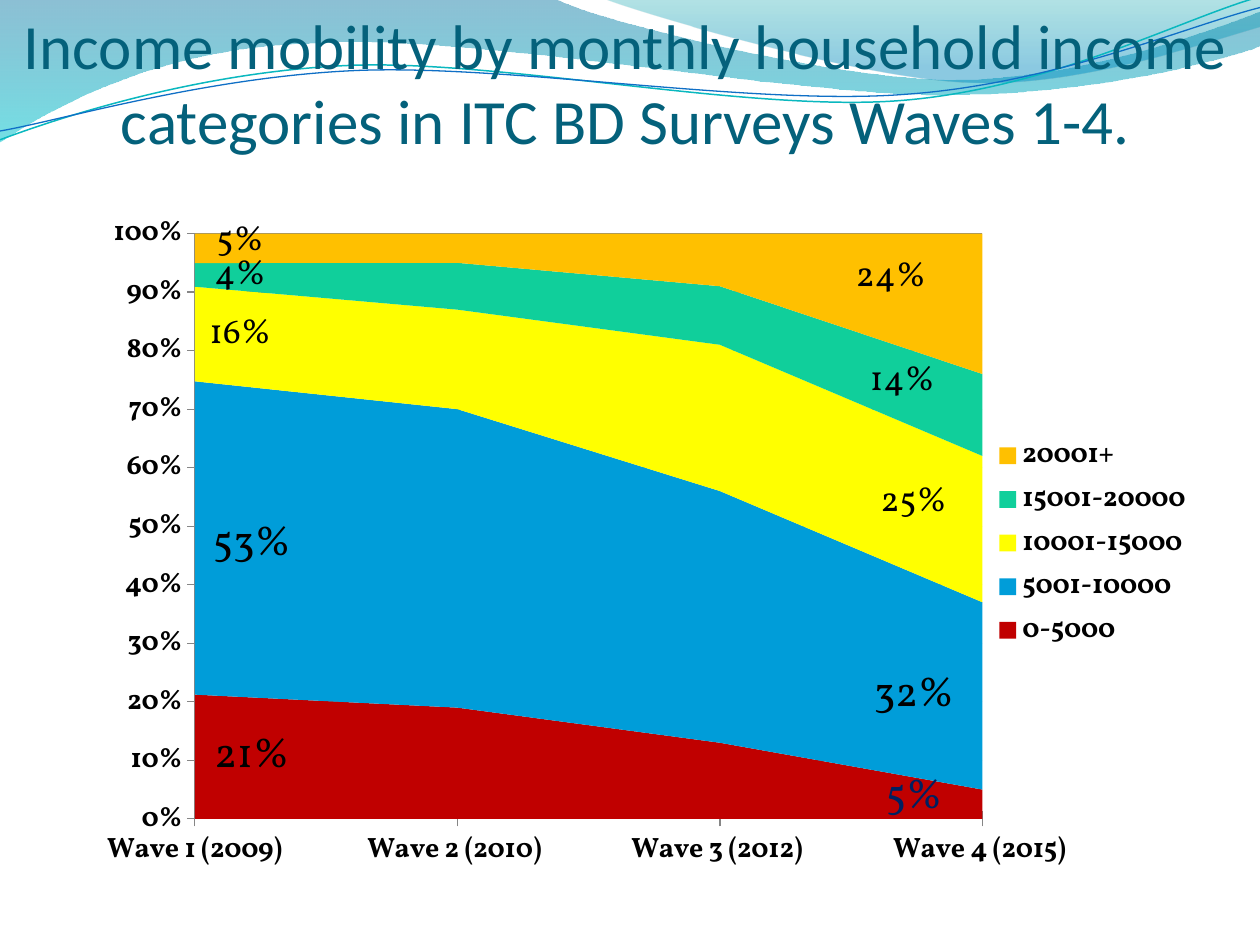
from lxml.etree import SubElement
from pptx import Presentation
from pptx.chart.data import CategoryChartData
from pptx.dml.color import RGBColor
from pptx.enum.chart import XL_CHART_TYPE, XL_LEGEND_POSITION, XL_TICK_MARK
from pptx.enum.text import MSO_ANCHOR, MSO_AUTO_SIZE, PP_ALIGN
from pptx.oxml import parse_xml
from pptx.oxml.ns import nsdecls, qn
from pptx.util import Inches, Pt

TITLE = "Income mobility by monthly household income categories in ITC BD Surveys Waves 1-4."
WAVES = ["Wave 1 (2009)", "Wave 2 (2010) ", "Wave 3 (2012) ", "Wave 4 (2015) "]
# name, values, colour, label size, first label offset, last label offset, last label colour
INCOMES = [
    ("0-5000", (0.21, 0.19, 0.13, 0.05), "C00000", 24, (0.05, 0), (-0.06, -0.01), "002060"),
    ("5001-10000 ", (0.53, 0.51, 0.43, 0.32), "009DD9", 24, (0.05, 0.01), (-0.06, 0), "000000"),
    ("10001-15000 ", (0.16, 0.17, 0.25, 0.25), "FFFF00", 20, (0.04, 0), (-0.06, -0.04), "000000"),
    ("15001-20000 ", (0.04, 0.08, 0.1, 0.14), "10CF9B", 20, (0.04, 0), (-0.07, -0.05), "000000"),
    ("20001+ ", (0.05, 0.05, 0.09, 0.24), "FFC000", 20, (0.04, -0.01), (-0.08, -0.04), "000000"),
]
LEFT_WAVE = [
    (0, 0), (4.4, -0.01), (4.76, 0.17, 6.64, 0.63, 7.58, 0.63),
    (8.53, 0.63, 9.58, 0.26, 10, 0.09), (10.01, 0.36),
    (9.83, 0.44, 8.7, 0.76, 7.46, 0.75), (6.22, 0.75, 3.82, 0.28, 2.57, 0.34),
    (1.29, 0.36, 0.46, 0.83, -0.01, 1.13), (0, 0),
]
RIGHT_WAVE = [
    (4.79, -0.01), (5.09, 0.11, 6.82, 0.62, 7.69, 0.65),
    (8.56, 0.69, 9.61, 0.32, 10, 0.21), (10, 0), (4.79, -0.01),
]
TEAL_CURVE = [
    (0, 1.11), (0.48, 0.93, 1.58, 0.57, 2.77, 0.52),
    (3.95, 0.47, 5.93, 0.89, 7.13, 0.8), (8.33, 0.71, 9.38, 0.15, 9.98, -0.02),
]
BLUE_CURVE = [
    (0, 1.04), (0.47, 0.96, 1.64, 0.61, 2.83, 0.56),
    (4.03, 0.51, 5.97, 0.84, 7.17, 0.75), (8.36, 0.67, 9.41, 0.21, 10, 0.06),
]


def color(value):
    """Turn a hex string into a colour."""
    return RGBColor.from_string(value)


def set_font(font, **values):
    """Set font attributes, with the colour given as hex."""
    font.color.rgb = color(values.pop("color", "000000"))
    for name, value in values.items():
        setattr(font, name, value)


def add_outline(page, box, segments, close):
    """Draw an outline of lines and cubic curves relative to the box."""
    left, top = box[:2]
    corners = [(left + Inches(s[-2]), top + Inches(s[-1])) for s in segments]
    builder = page.shapes.build_freeform(*corners[0])
    builder.add_line_segments(corners[1:], close=close)
    shape = builder.convert_to_shape()
    shape.shadow.inherit = False
    lines = shape._element.spPr.findall(f".//{qn('a:lnTo')}")
    for line, segment in zip(lines, segments[1:]):
        if len(segment) == 2:
            continue
        curve = line.makeelement(qn("a:cubicBezTo"))
        for x, y in zip(segment[::2], segment[1::2]):
            point = SubElement(curve, qn("a:pt"))
            point.set("x", str(left + Inches(x) - shape.left))
            point.set("y", str(top + Inches(y) - shape.top))
        line.getparent().replace(line, curve)
    return shape


def add_wave(page, box, segments, stops):
    """Add a wave with a see-through vertical gradient."""
    shape = add_outline(page, box, segments, True)
    shape.line.fill.background()
    stop_xml = "".join(
        f'<a:gs pos="{place * 1000}"><a:srgbClr val="{value}">'
        f'<a:alpha val="{opacity * 1000}"/></a:srgbClr></a:gs>'
        for place, value, opacity in stops
    )
    gradient = parse_xml(
        f'<a:gradFill {nsdecls("a")}><a:gsLst>{stop_xml}</a:gsLst>'
        '<a:lin ang="5400000" scaled="0"/></a:gradFill>'
    )
    shape._element.spPr.find(qn("a:custGeom")).addnext(gradient)


def add_curve(page, box, segments, value, width):
    """Add a thin open curve."""
    shape = add_outline(page, box, segments, False)
    shape.fill.background()
    shape.line.color.rgb = color(value)
    shape.line.width = Pt(width)


def add_waves(page, box):
    """Decorate the top of the page."""
    add_wave(page, box, LEFT_WAVE, [(0, "0074A1", 45), (100, "00C6CF", 55)])
    add_wave(page, box, RIGHT_WAVE, [(0, "00A1A9", 30), (80, "008BBF", 45)])
    add_curve(page, box, TEAL_CURVE, "0AB8BF", 0.85)
    add_curve(page, box, BLUE_CURVE, "0F6FC6", 0.75)


def place(shape, box):
    """Move and size a shape to the box."""
    for name, value in zip(("left", "top", "width", "height"), box):
        setattr(shape, name, value)


def add_title(page, box):
    """Format the title and bring it in front of the waves."""
    title = page.shapes.title
    place(title, box)
    frame = title.text_frame
    settings = {
        "text": TITLE, "word_wrap": True, "auto_size": MSO_AUTO_SIZE.NONE,
        "vertical_anchor": MSO_ANCHOR.BOTTOM, "margin_left": 0, "margin_right": 0,
        "margin_top": Inches(0.05), "margin_bottom": 0,
    }
    for name, value in settings.items():
        setattr(frame, name, value)
    para = frame.paragraphs[0]
    para.alignment = PP_ALIGN.CENTER
    set_font(para.runs[0].font, size=Pt(36), name="Calibri", color="04617B")
    page.shapes._spTree.append(title._element)


def make_layout(**values):
    """Build a manual chart layout."""
    layout = parse_xml(f'<c:layout {nsdecls("c")}/>')
    manual = SubElement(layout, qn("c:manualLayout"))
    for name, value in values.items():
        SubElement(manual, qn(f"c:{name}")).set("val", str(value))
    return layout


def get_label(series, index):
    """Return the label font and label element of one point."""
    font = series.points[index].data_label.font
    return font, series._element.xpath(f"c:dLbls/c:dLbl[c:idx/@val='{index}']")[0]


def label_point(series, index, offset, size, value):
    """Label one point, moved by the offset."""
    font, element = get_label(series, index)
    set_font(font, size=Pt(size), name="Vollkorn", color=value)
    element.insert(1, make_layout(x=offset[0], y=offset[1]))


def hide_label(series, index):
    """Switch off the label of one point."""
    _, element = get_label(series, index)
    for child in list(element)[1:]:
        element.remove(child)
    SubElement(element, qn("c:delete")).set("val", "1")


def hide_leaders(series):
    """Switch off the lines from points to moved labels."""
    labels = series.data_labels._element
    for old in labels.findall(qn("c:showLeaderLines")):
        labels.remove(old)
    SubElement(labels, qn("c:showLeaderLines")).set("val", "0")
    labels.append(parse_xml(
        f'<c:extLst {nsdecls("c")}><c:ext uri="{{CE6537A1-D6FC-4f65-9D91-7224C49458BB}}" '
        'xmlns:c15="http://schemas.microsoft.com/office/drawing/2012/chart">'
        '<c15:showLeaderLines val="0"/></c:ext></c:extLst>'
    ))


def add_income_chart(page, box):
    """Add the stacked area chart of income shares."""
    data = CategoryChartData(number_format="0%")
    data.categories = WAVES
    for name, values, *_ in INCOMES:
        data.add_series(name, values)
    chart = page.shapes.add_chart(XL_CHART_TYPE.AREA_STACKED_100, *box, data).chart
    chart.has_title = False
    bold = {"size": Pt(16), "bold": True, "name": "Vollkorn"}
    set_font(chart.font, size=Pt(10), name="Vollkorn")
    for axis in (chart.category_axis, chart.value_axis):
        axis.major_tick_mark = XL_TICK_MARK.CROSS
        axis.minor_tick_mark = XL_TICK_MARK.NONE
        axis.format.line.color.rgb = color("868686")
        set_font(axis.tick_labels.font, **bold)
    chart.category_axis.has_major_gridlines = False
    axis = chart.value_axis
    axis.has_major_gridlines = True
    axis.major_gridlines.format.line.color.rgb = color("868686")
    axis.tick_labels.number_format = "0%"
    axis.tick_labels.number_format_is_linked = False
    last_index = len(WAVES) - 1
    for series, income in zip(chart.plots[0].series, INCOMES):
        _, _, value, size, first, last, last_color = income
        series.format.fill.solid()
        series.format.fill.fore_color.rgb = color(value)
        series.data_labels.show_value = True
        label_point(series, 0, first, size, "000000")
        for index in range(1, last_index):
            hide_label(series, index)
        label_point(series, last_index, last, size, last_color)
        hide_leaders(series)
    chart.has_legend = True
    chart.legend.position = XL_LEGEND_POSITION.RIGHT
    chart.legend.include_in_layout = False
    set_font(chart.legend.font, **bold)
    plot_area = chart._chartSpace.chart.plotArea
    for old in plot_area.findall(qn("c:layout")):
        plot_area.remove(old)
    plot_area.insert(0, make_layout(
        layoutTarget="inner", xMode="edge", yMode="edge", x=0.11, y=0.04, w=0.69, h=0.87))


def main():
    """Build and save the deck."""
    deck = Presentation()
    deck.slide_width, deck.slide_height = Inches(10), Inches(7.5)
    page = deck.slides.add_slide(deck.slide_layouts[5])
    add_waves(page, (0, 0, Inches(10), Inches(1.13)))
    add_title(page, (Inches(0.16), 0, Inches(9.61), Inches(1.25)))
    add_income_chart(page, (Inches(0.55), Inches(1.64), Inches(9.06), Inches(5.34)))
    deck.save("out.pptx")


if __name__ == "__main__":
    main()
